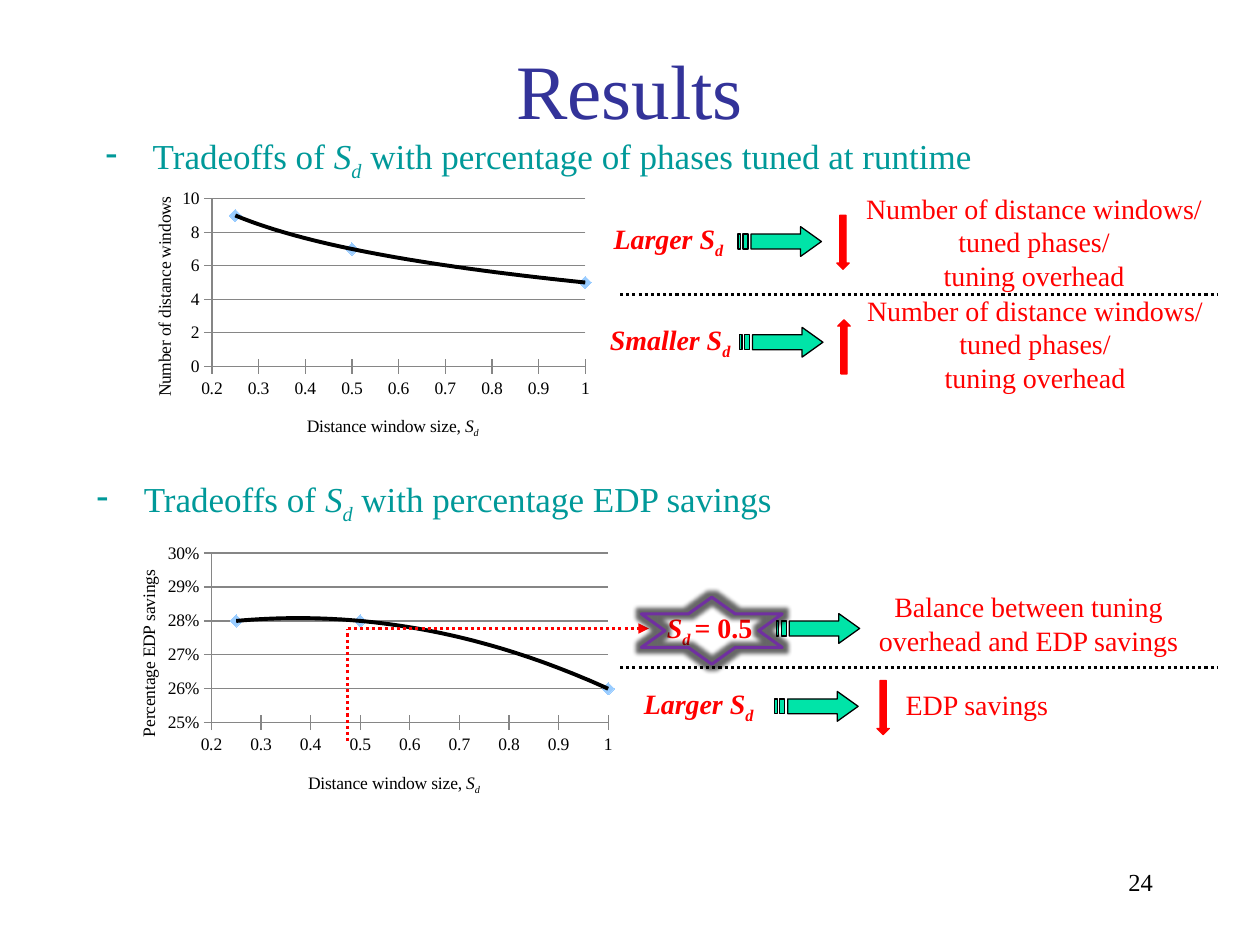
from dataclasses import dataclass
from typing import NamedTuple, Optional

from lxml.etree import SubElement
from pptx import Presentation
from pptx.chart.data import XyChartData
from pptx.dml.color import RGBColor
from pptx.enum.chart import XL_AXIS_CROSSES as Crosses, XL_CHART_TYPE as ChartType
from pptx.enum.chart import XL_MARKER_STYLE as Marker, XL_TICK_MARK as Tick
from pptx.enum.dml import MSO_LINE_DASH_STYLE as Dash
from pptx.enum.shapes import MSO_CONNECTOR as Connector, MSO_SHAPE as Preset
from pptx.enum.text import MSO_ANCHOR as Anchor, PP_ALIGN as Align
from pptx.oxml import parse_xml
from pptx.oxml.ns import nsdecls, qn
from pptx.util import Cm, Pt


@dataclass(frozen=True)
class Theme:
    font: str = "Times New Roman"
    title: str = "333399"
    bullet: str = "009999"
    accent: str = "FF0000"
    ink: str = "000000"
    arrow: str = "00E4A8"
    star: str = "7030A0"
    marker: str = "99CCFF"
    grid: str = "868686"
    title_size: float = 44
    bullet_size: float = 20
    label_size: float = 16
    number_size: float = 14
    chart_size: float = 10
    thin: float = 0.75
    thick: float = 1.75


THEME = Theme()


class Run(NamedTuple):
    text: str
    italic: bool = False
    bold: bool = False
    subscript: bool = False


class Box(NamedTuple):
    left: float
    top: float
    width: float
    height: float

    def lengths(self) -> list:
        return [Cm(value) for value in self]


@dataclass(frozen=True)
class TradeoffChart:
    box: Box
    values: tuple
    value_title: str
    value_range: tuple
    value_step: float
    number_format: str
    trend: str
    plot: Box  # fractions of the chart
    size_title_at: tuple
    value_title_at: tuple


@dataclass(frozen=True)
class Finding:
    """A condition, a striped arrow, an optional trend arrow and an effect."""
    condition: Box
    runs: list
    arrow: tuple
    effect: Box
    lines: tuple
    trend: Optional[tuple] = None
    rising: bool = False


SIZE = (Run("S", True), Run("d", True, subscript=True))
SIZE_TITLE = [Run("Distance window size, "), *SIZE]


def size_label(word: str) -> list:
    return [Run(f"{word} S", True, True), Run("d", True, True, True)]


def add_runs(paragraph, runs, size: float, color: str) -> None:
    for item in runs:
        run = paragraph.add_run()
        run.text = item.text
        font = run.font
        font.name, font.size = THEME.font, Pt(size)
        font.bold, font.italic = item.bold, item.italic
        font.color.rgb = RGBColor.from_string(color)
        if item.subscript:
            run._r.get_or_add_rPr().set("baseline", "-25000")


def add_text(slide, box: Box, paragraphs, size: float, color: str,
             align=Align.CENTER, wrap=False, anchor=Anchor.TOP):
    frame = slide.shapes.add_textbox(*box.lengths()).text_frame
    frame.word_wrap, frame.vertical_anchor = wrap, anchor
    for index, runs in enumerate(paragraphs):
        paragraph = frame.add_paragraph() if index else frame.paragraphs[0]
        paragraph.alignment = align
        add_runs(paragraph, runs, size, color)
    return frame


def add_bullet(slide, left: float, top: float, ending: str) -> None:
    runs = [Run("Tradeoffs of "), *SIZE, Run(ending)]
    frame = add_text(slide, Box(left, top, 21.59, 1.04), [runs],
                     THEME.bullet_size, THEME.bullet, Align.LEFT, True)
    properties = frame.paragraphs[0]._p.get_or_add_pPr()
    properties.set("marL", str(Cm(0.95)))
    properties.set("indent", str(-Cm(0.95)))
    SubElement(properties, qn("a:buChar")).set("char", "-")


def paint(shape, fill: Optional[str], line: str, width: float) -> None:
    shape.shadow.inherit = False
    if fill:
        shape.fill.solid()
        shape.fill.fore_color.rgb = RGBColor.from_string(fill)
    else:
        shape.fill.background()
    shape.line.color.rgb = RGBColor.from_string(line)
    shape.line.width = Pt(width)


def add_striped_arrow(slide, left: float, top: float) -> None:
    head = [(1.26, 0), (1.26, 0.15), (0.26, 0.15), (0.26, 0.45),
            (1.26, 0.45), (1.26, 0.6), (1.68, 0.3)]
    stripes = [[(start, 0.15), (start, 0.45), (end, 0.45), (end, 0.15)]
               for start, end in ((0.1, 0.2), (0, 0.05))]
    builder = slide.shapes.build_freeform(Cm(head[0][0]), Cm(head[0][1]))
    for index, outline in enumerate([head, *stripes]):
        points = [(Cm(x), Cm(y)) for x, y in outline]
        if index:
            builder.move_to(*points[0])
        builder.add_line_segments(points[1:], close=True)
    paint(builder.convert_to_shape(Cm(left), Cm(top)), THEME.arrow, THEME.ink, THEME.thin)


def add_dotted_line(slide, start: tuple, end: tuple, color: str, arrowhead=False) -> None:
    points = [Cm(value) for value in (*start, *end)]
    line = slide.shapes.add_connector(Connector.STRAIGHT, *points)
    line.line.color.rgb = RGBColor.from_string(color)
    line.line.width = Pt(THEME.thick)
    line.line.dash_style = Dash.ROUND_DOT
    properties = line._element.spPr
    if arrowhead:
        SubElement(properties.find(qn("a:ln")), qn("a:tailEnd")).set("type", "triangle")
    SubElement(properties, qn("a:effectLst"))


def add_finding(slide, finding: Finding) -> None:
    add_text(slide, finding.condition, [finding.runs], THEME.label_size, THEME.accent)
    add_striped_arrow(slide, *finding.arrow)
    if finding.trend:
        arrow = slide.shapes.add_shape(Preset.DOWN_ARROW, *Box(*finding.trend, 0.25, 1.09).lengths())
        paint(arrow, THEME.accent, THEME.accent, THEME.thin)
        if finding.rising:
            arrow._element.spPr.find(qn("a:xfrm")).set("flipV", "1")
    add_text(slide, finding.effect, [[Run(line)] for line in finding.lines],
             THEME.label_size, THEME.accent)


def set_layout(parent, index: int, inner=False, **fractions: float) -> None:
    for old in parent.findall(qn("c:layout")):
        parent.remove(old)
    target = '<c:layoutTarget val="inner"/>' if inner else ""
    modes = "".join(f'<c:{key}Mode val="edge"/>' for key in "xy")
    places = "".join(f'<c:{key} val="{value}"/>' for key, value in fractions.items())
    parent.insert(index, parse_xml(
        f'<c:layout {nsdecls("c")}><c:manualLayout>{target}{modes}{places}'
        '</c:manualLayout></c:layout>'))


def style_axis(axis, limits, step, number_format, runs, title_at, vertical) -> None:
    axis.minimum_scale, axis.maximum_scale = limits
    axis.major_unit = step
    axis.major_tick_mark, axis.minor_tick_mark = Tick.CROSS, Tick.NONE
    axis.crosses = Crosses.MINIMUM
    axis.has_major_gridlines = vertical
    axis.tick_labels.number_format = number_format
    axis.tick_labels.number_format_is_linked = False
    lines = [axis.format.line] + ([axis.major_gridlines.format.line] if vertical else [])
    for line in lines:
        line.color.rgb = RGBColor.from_string(THEME.grid)
        line.width = Pt(THEME.thin)
    frame = axis.axis_title.text_frame
    add_runs(frame.paragraphs[0], runs, THEME.chart_size, THEME.ink)
    frame._txBody.bodyPr.set("rot", "-5400000" if vertical else "0")
    frame._txBody.bodyPr.set("vert", "horz")
    set_layout(axis.axis_title._element, 1, x=title_at[0], y=title_at[1])


def add_tradeoff_chart(slide, spec_data: TradeoffChart) -> None:
    data = XyChartData()
    points = data.add_series("Series 1")
    for size, value in zip((0.25, 0.5, 1), spec_data.values):
        points.add_data_point(size, value)
    chart = slide.shapes.add_chart(ChartType.XY_SCATTER, *spec_data.box.lengths(), data).chart
    chart.has_legend = chart.has_title = False
    chart.font.name, chart.font.size = THEME.font, Pt(THEME.chart_size)
    chart.font.color.rgb = RGBColor.from_string(THEME.ink)
    chart.plots[0].vary_by_categories = False
    style_axis(chart.category_axis, (0.2, 1), 0.1, "General", SIZE_TITLE,
               spec_data.size_title_at, False)
    style_axis(chart.value_axis, spec_data.value_range, spec_data.value_step,
               spec_data.number_format, [Run(spec_data.value_title)],
               spec_data.value_title_at, True)
    plot = spec_data.plot
    set_layout(chart._chartSpace.chart.plotArea, 0, True,
               x=plot.left, y=plot.top, w=plot.width, h=plot.height)

    # Markers only, with a fitted curve
    series = chart.plots[0].series[0]
    series.smooth = False
    series.format.line.fill.background()
    series.marker.style, series.marker.size = Marker.DIAMOND, 7
    series.marker.format.fill.solid()
    series.marker.format.fill.fore_color.rgb = RGBColor.from_string(THEME.marker)
    series.marker.format.line.fill.background()
    order = '<c:order val="2"/>' if spec_data.trend == "poly" else ""
    series._element.find(qn("c:xVal")).addprevious(parse_xml(
        f'<c:trendline {nsdecls("c", "a")}><c:spPr><a:ln w="{Pt(2.25)}"><a:solidFill>'
        f'<a:srgbClr val="{THEME.ink}"/></a:solidFill></a:ln></c:spPr>'
        f'<c:trendlineType val="{spec_data.trend}"/>{order}'
        '<c:dispRSqr val="0"/><c:dispEq val="0"/></c:trendline>'))


def add_star(slide) -> None:
    star = slide.shapes.add_shape(Preset.STAR_6_POINT, *Box(12.93, 12.04, 2.84, 1.35).lengths())
    paint(star, None, THEME.star, THEME.thick)
    effects = star._element.spPr.find(qn("a:effectLst"))
    effects.append(parse_xml(
        f'<a:glow {nsdecls("a")} rad="{Pt(5)}"><a:srgbClr val="{THEME.ink}">'
        '<a:alpha val="60000"/></a:srgbClr></a:glow>'))


OVERHEAD = ("Number of distance windows/", "tuned phases/", "tuning overhead")
CHARTS = [
    TradeoffChart(Box(2.44, 3.73, 9.65, 5.54), (9, 7, 5), "Number of distance windows",
                  (0, 10), 2, "General", "log", Box(0.19, 0.05, 0.78, 0.61),
                  (0.38, 0.82), (0.06, 0.03)),
    TradeoffChart(Box(2.08, 10.87, 10.39, 5.61), (0.28, 0.28, 0.26), "Percentage EDP savings",
                  (0.25, 0.3), 0.01, "0%", "poly", Box(0.21, 0.05, 0.77, 0.61),
                  (0.39, 0.82), (0.06, 0.1)),
]
FINDINGS = [
    Finding(Box(12.09, 4.34, 2.77, 0.94), size_label("Larger"), (14.88, 4.57),
            Box(17.15, 3.73, 7.39, 2.31), OVERHEAD, (16.87, 4.34)),
    Finding(Box(12.01, 6.38, 3, 0.94), size_label("Smaller"), (14.91, 6.6),
            Box(17.17, 5.79, 7.39, 2.31), OVERHEAD, (16.89, 6.45), True),
    Finding(Box(12.7, 13.72, 2.77, 0.94), size_label("Larger"), (15.62, 13.94),
            Box(17.98, 13.74, 3.43, 0.94), ("EDP savings",), (17.68, 13.72)),
    Finding(Box(13.16, 12.19, 2.29, 0.94),
            [Run("S", True, True), Run("d ", True, True, True), Run("= ", True, True),
             Run("0.5", bold=True)], (15.65, 12.37), Box(17.42, 11.76, 6.63, 1.63),
            ("Balance between tuning", "overhead and EDP savings")),
]


def main() -> None:
    presentation = Presentation()
    presentation.slide_width, presentation.slide_height = Cm(25.4), Cm(19.05)
    slide = presentation.slides.add_slide(presentation.slide_layouts[6])

    # Title, page number and bullets
    add_text(slide, Box(1.9, 0.71, 21.59, 2.16), [[Run("Results")]], THEME.title_size,
             THEME.title, wrap=True, anchor=Anchor.MIDDLE)
    add_text(slide, Box(18.21, 17.35, 5.28, 1.27), [[Run("24")]], THEME.number_size,
             THEME.ink, Align.RIGHT, True)
    add_bullet(slide, 1.88, 2.59, " with percentage of phases tuned at runtime")
    add_bullet(slide, 1.7, 9.5, " with percentage EDP savings")

    # Charts and what they show
    for chart in CHARTS:
        add_tradeoff_chart(slide, chart)
    for finding in FINDINGS:
        add_finding(slide, finding)

    # Dividers and the pointer to the best size
    for height in (5.94, 13.46):
        add_dotted_line(slide, (12.5, height), (24.56, height), THEME.ink)
    add_dotted_line(slide, (7.01, 14.94), (7.01, 12.67), THEME.accent)
    add_dotted_line(slide, (7.01, 12.67), (13.08, 12.67), THEME.accent, True)
    add_star(slide)
    presentation.save("out.pptx")


if __name__ == "__main__":
    main()
